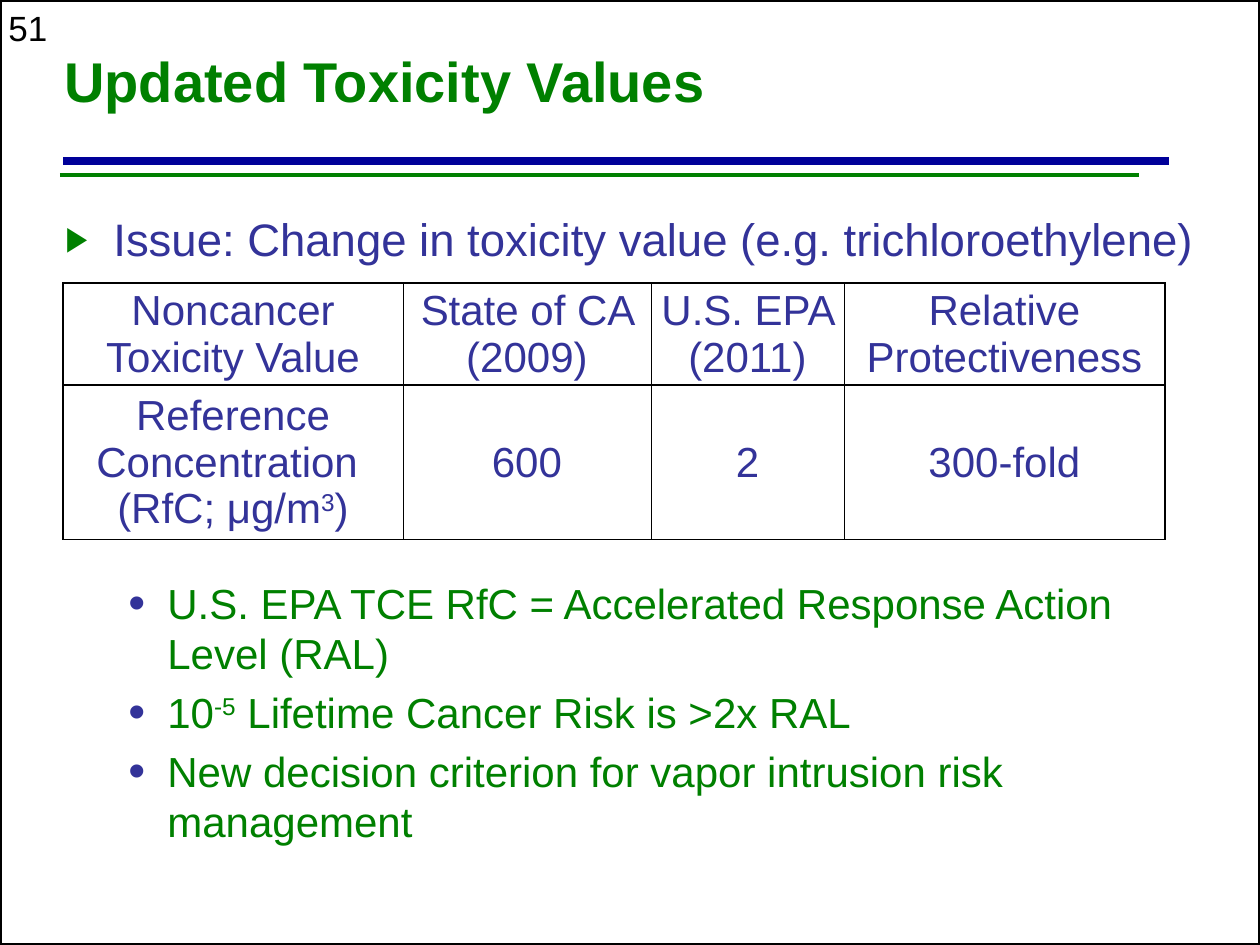
from dataclasses import dataclass

from lxml import etree
from pptx import Presentation
from pptx.dml.color import RGBColor
from pptx.enum.shapes import MSO_CONNECTOR, MSO_SHAPE
from pptx.enum.text import MSO_ANCHOR, PP_ALIGN
from pptx.oxml.ns import qn
from pptx.util import Emu, Pt

PX = 914400 / 126
STRAIGHT = MSO_CONNECTOR.STRAIGHT
RECTANGLE = MSO_SHAPE.RECTANGLE
TOP, MIDDLE = MSO_ANCHOR.TOP, MSO_ANCHOR.MIDDLE
LEFT, CENTER = PP_ALIGN.LEFT, PP_ALIGN.CENTER

BLACK = RGBColor(0, 0, 0)
NAVY = RGBColor(0x00, 0x00, 0x99)
INDIGO = RGBColor(0x33, 0x33, 0x99)
GREEN = RGBColor(0x00, 0x80, 0x00)


def px(length: int) -> Emu:
    return Emu(round(length * PX))


@dataclass(frozen=True)
class Box:
    left: int
    top: int
    width: int
    height: int

    def emu(self) -> tuple:
        return px(self.left), px(self.top), px(self.width), px(self.height)


@dataclass(frozen=True)
class Bullet:
    char: str
    color: RGBColor
    percent: int
    margin: int
    hanging: int


@dataclass(frozen=True)
class Style:
    size: int
    color: RGBColor
    bold: bool = False
    align: PP_ALIGN = LEFT
    line_spacing: float = 1.0
    space_before: float = 0
    bullet: Bullet | None = None


@dataclass(frozen=True)
class Rule:
    left: int
    right: int
    y: int
    color: RGBColor
    weight: float


ARROW = Bullet("▶", GREEN, 75, 48, 48)
DOT = Bullet("•", INDIGO, 115, 102, 39)

NUMBER = Style(20, BLACK)
TITLE = Style(32, GREEN, bold=True, line_spacing=0.85)
ISSUE = Style(26, INDIGO, bullet=ARROW)
POINT = Style(24, GREEN, space_before=4.8, bullet=DOT)
CELL = Style(24, INDIGO, align=CENTER)

RULES = [Rule(63, 1169, 161, NAVY, 4.5), Rule(60, 1139, 175, GREEN, 2)]

# Text between carets is superscript
POINTS = [
    "U.S. EPA TCE RfC = Accelerated Response Action Level (RAL)",
    "10^-5^ Lifetime Cancer Risk is >2x RAL",
    "New decision criterion for vapor intrusion risk management",
]
TOXICITY_ROWS = [
    [["Noncancer Toxicity Value"], ["State of CA (2009)"],
     ["U.S. EPA (2011)"], ["Relative Protectiveness"]],
    [["Reference Concentration ", "(RfC; μg/m^3^)"], ["600"], ["2"], ["300-fold"]],
]
COLUMN_WIDTHS = [340, 248, 193, 321]
ROW_HEIGHTS = [102, 154]


def add_bullet(paragraph, bullet: Bullet) -> None:
    props = paragraph._p.get_or_add_pPr()
    props.set("marL", str(px(bullet.margin)))
    props.set("indent", str(-px(bullet.hanging)))
    color = etree.SubElement(props, qn("a:buClr"))
    etree.SubElement(color, qn("a:srgbClr"), val=str(bullet.color))
    etree.SubElement(props, qn("a:buSzPct"), val=str(bullet.percent * 1000))
    etree.SubElement(props, qn("a:buFont"), typeface="Arial")
    etree.SubElement(props, qn("a:buChar"), char=bullet.char)


def write(frame, texts: list[str], style: Style) -> None:
    for index, text in enumerate(texts):
        paragraph = frame.add_paragraph() if index else frame.paragraphs[0]
        paragraph.alignment = style.align
        paragraph.line_spacing = style.line_spacing
        if index:
            paragraph.space_before = Pt(style.space_before)
        if style.bullet:
            add_bullet(paragraph, style.bullet)
        font = paragraph.font
        font.name, font.size, font.bold = "Arial", Pt(style.size), style.bold
        font.color.rgb = style.color
        for part, words in enumerate(text.split("^")):
            run = paragraph.add_run()
            run.text = words
            if part % 2:
                run.font._element.set("baseline", "30000")


def add_text(slide, box: Box, texts: list[str], style: Style,
             anchor: MSO_ANCHOR = TOP, wrap: bool = True) -> None:
    frame = slide.shapes.add_textbox(*box.emu()).text_frame
    frame.word_wrap = wrap
    frame.vertical_anchor = anchor
    write(frame, texts, style)


def add_rule(slide, rule: Rule) -> None:
    line = slide.shapes.add_connector(
        STRAIGHT, px(rule.left), px(rule.y), px(rule.right), px(rule.y))
    line.line.color.rgb = rule.color
    line.line.width = Pt(rule.weight)
    etree.SubElement(line._element.spPr, qn("a:effectLst"))


def add_borders(cell, weights: dict[str, float]) -> None:
    props = cell._tc.get_or_add_tcPr()
    for side, weight in weights.items():
        border = etree.SubElement(props, qn(f"a:ln{side}"), w=str(Pt(weight)))
        fill = etree.SubElement(border, qn("a:solidFill"))
        etree.SubElement(fill, qn("a:srgbClr"), val=str(BLACK))


def add_toxicity_table(slide, left: int, top: int) -> None:
    box = Box(left, top, sum(COLUMN_WIDTHS), sum(ROW_HEIGHTS))
    last_row, last_column = len(ROW_HEIGHTS) - 1, len(COLUMN_WIDTHS) - 1
    table = slide.shapes.add_table(last_row + 1, last_column + 1, *box.emu()).table
    table.first_row = table.horz_banding = False
    for column, width in zip(table.columns, COLUMN_WIDTHS):
        column.width = px(width)
    for r, (row, height) in enumerate(zip(table.rows, ROW_HEIGHTS)):
        row.height = px(height)
        for c, cell in enumerate(row.cells):
            cell.margin_left = cell.margin_right = cell.margin_top = px(1)
            cell.margin_bottom = 0
            cell.vertical_anchor = MIDDLE
            add_borders(cell, {
                "L": 1 if c == 0 else 0.5,
                "R": 1 if c == last_column else 0.5,
                "T": 1,
                "B": 0.5 if r == last_row else 1,
            })
            cell.fill.background()
            write(cell.text_frame, TOXICITY_ROWS[r][c], CELL)


def main() -> None:
    deck = Presentation()
    deck.slide_width, deck.slide_height = px(1260), px(945)
    slide = deck.slides.add_slide(deck.slide_layouts[6])

    # Rules, page number and slide frame
    for rule in RULES:
        add_rule(slide, rule)
    add_text(slide, Box(-4, 0, 68, 54), ["51"], NUMBER, wrap=False)
    frame = slide.shapes.add_shape(RECTANGLE, *Box(0, 0, 1260, 945).emu())
    frame.shadow.inherit = False
    frame.fill.background()
    frame.line.color.rgb = BLACK
    frame.line.width = Pt(2)

    # Title, issue and its points
    add_text(slide, Box(52, 13, 1046, 145), ["Updated Toxicity Values"], TITLE, MIDDLE)
    add_text(slide, Box(53, 205, 1166, 65),
             ["Issue: Change in toxicity value (e.g. trichloroethylene)"], ISSUE)
    add_text(slide, Box(53, 571, 1166, 280), POINTS, POINT)

    # Toxicity value comparison
    add_toxicity_table(slide, 63, 283)

    deck.save("out.pptx")


if __name__ == "__main__":
    main()
